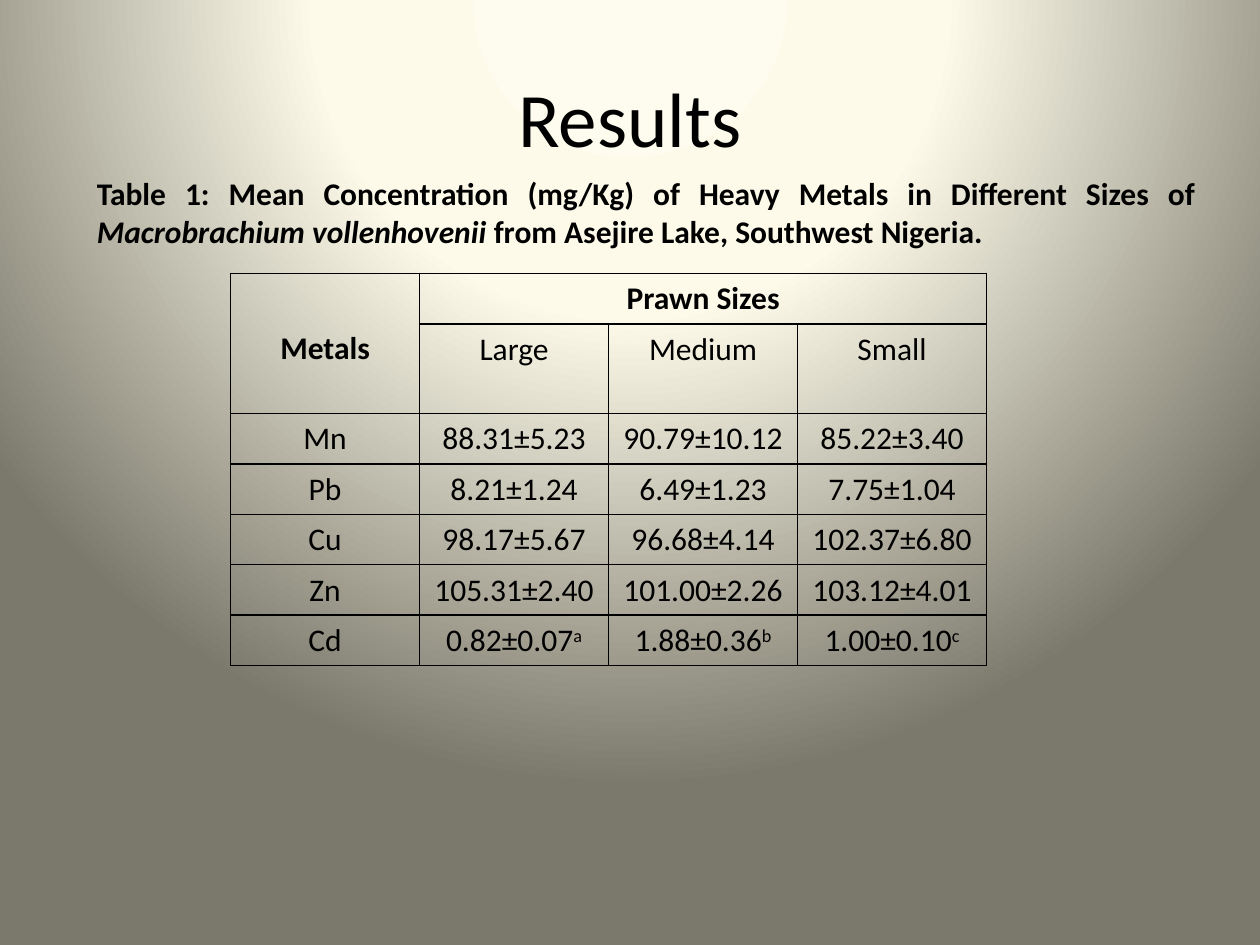
from pptx import Presentation
from pptx.dml.color import RGBColor
from pptx.enum.text import MSO_ANCHOR, PP_ALIGN
from pptx.oxml import parse_xml
from pptx.oxml.ns import nsdecls, qn
from pptx.util import Inches, Pt

COLORS = {"text": "000000", "glow": "FEFCEE", "cream": "FDFAEA", "shade": "7B796B"}
METALS = [
    ("Mn", "88.31±5.23", "90.79±10.12", "85.22±3.40"),
    ("Pb", "8.21±1.24", "6.49±1.23", "7.75±1.04"),
    ("Cu", "98.17±5.67", "96.68±4.14", "102.37±6.80"),
    ("Zn", "105.31±2.40", "101.00±2.26", "103.12±4.01"),
    ("Cd", "0.82±0.07", "1.88±0.36", "1.00±0.10"),
]
SIGNIFICANCE = ("", "a", "b", "c")


def add_run(paragraph, text, size=18, bold=False, italic=False, superscript=False):
    run = paragraph.add_run()
    run.text = text
    font = run.font
    font.name, font.size = "Calibri", Pt(size)
    font.bold, font.italic = bold, italic
    font.color.rgb = RGBColor.from_string(COLORS["text"])
    if superscript:
        run._r.get_or_add_rPr().set("baseline", "30000")


class SlideBuilder:
    def __init__(self, slide):
        self.slide = slide

    def background(self, stops):
        """Fill the slide with a circular gradient centred above its top edge."""
        self.slide.background.fill.solid()
        properties = self.slide.element.find(".//" + qn("p:bgPr"))
        stop_xml = "".join(
            f'<a:gs pos="{position * 1000}"><a:srgbClr val="{COLORS[name]}"/></a:gs>'
            for position, name in stops)
        gradient = parse_xml(
            f'<a:gradFill {nsdecls("a")} rotWithShape="1"><a:gsLst>{stop_xml}</a:gsLst>'
            '<a:path path="circle">'
            '<a:fillToRect l="50000" t="-80000" r="50000" b="180000"/>'
            '</a:path></a:gradFill>')
        properties.replace(properties.find(qn("a:solidFill")), gradient)

    def text(self, left, top, width, height, runs, align, anchor=MSO_ANCHOR.TOP):
        shape = self.slide.shapes.add_textbox(
            Inches(left), Inches(top), Inches(width), Inches(height))
        frame = shape.text_frame
        frame.word_wrap = True
        frame.vertical_anchor = anchor
        paragraph = frame.paragraphs[0]
        paragraph.alignment = align
        for text, style in runs:
            add_run(paragraph, text, **style)

    def table(self, left, top, column_width, row_heights, columns):
        """Add an unfilled table with thin borders around every cell."""
        frame = self.slide.shapes.add_table(
            len(row_heights), columns, Inches(left), Inches(top),
            Inches(column_width * columns), Inches(sum(row_heights)))
        table = frame.table
        table.first_row = table.horz_banding = False
        for column in table.columns:
            column.width = Inches(column_width)
        for row, height in zip(table.rows, row_heights):
            row.height = Inches(height)
        for cell in table.iter_cells():
            cell.fill.background()
            self.borders(cell)
        return table

    def borders(self, cell):
        properties = cell._tc.get_or_add_tcPr()
        for index, side in enumerate("LRTB"):
            properties.insert(index, parse_xml(
                f'<a:ln{side} {nsdecls("a")} w="{Pt(1)}"><a:solidFill>'
                f'<a:srgbClr val="{COLORS["text"]}"/></a:solidFill></a:ln{side}>'))

    def cell(self, cell, text, bold=False, superscript=""):
        paragraph = cell.text_frame.paragraphs[0]
        paragraph.alignment = PP_ALIGN.CENTER
        add_run(paragraph, text, bold=bold)
        if superscript:
            add_run(paragraph, superscript, superscript=True)


def main():
    presentation = Presentation()
    presentation.slide_width, presentation.slide_height = Inches(10), Inches(7.5)
    builder = SlideBuilder(presentation.slides.add_slide(presentation.slide_layouts[6]))

    builder.background([(0, "glow"), (40, "cream"), (100, "shade")])
    builder.text(0.5, 0.3, 9, 1.25, [("Results", {"size": 44})],
                 PP_ALIGN.CENTER, MSO_ANCHOR.MIDDLE)

    table = builder.table(1.83, 2.17, 1.5, [0.4, 0.71] + [0.4] * len(METALS), 4)
    metals_heading = table.cell(0, 0)
    metals_heading.merge(table.cell(1, 0))
    metals_heading.vertical_anchor = MSO_ANCHOR.BOTTOM
    metals_heading.margin_bottom = Inches(0.36)
    builder.cell(metals_heading, "Metals", bold=True)
    table.cell(0, 1).merge(table.cell(0, 3))
    builder.cell(table.cell(0, 1), "Prawn Sizes", bold=True)
    for column, size in enumerate(("Large", "Medium", "Small"), start=1):
        builder.cell(table.cell(1, column), size)
    for row, values in enumerate(METALS, start=2):
        for column, value in enumerate(values):
            mark = SIGNIFICANCE[column] if values[0] == "Cd" else ""
            builder.cell(table.cell(row, column), value, superscript=mark)

    builder.text(0.67, 1.33, 8.92, 0.71, [
        ("Table 1: Mean Concentration (mg/Kg) of Heavy Metals in Different Sizes of ",
         {"bold": True}),
        ("Macrobrachium vollenhovenii ", {"bold": True, "italic": True}),
        ("from Asejire Lake, Southwest Nigeria.", {"bold": True}),
    ], PP_ALIGN.JUSTIFY)

    presentation.save("out.pptx")


if __name__ == "__main__":
    main()
